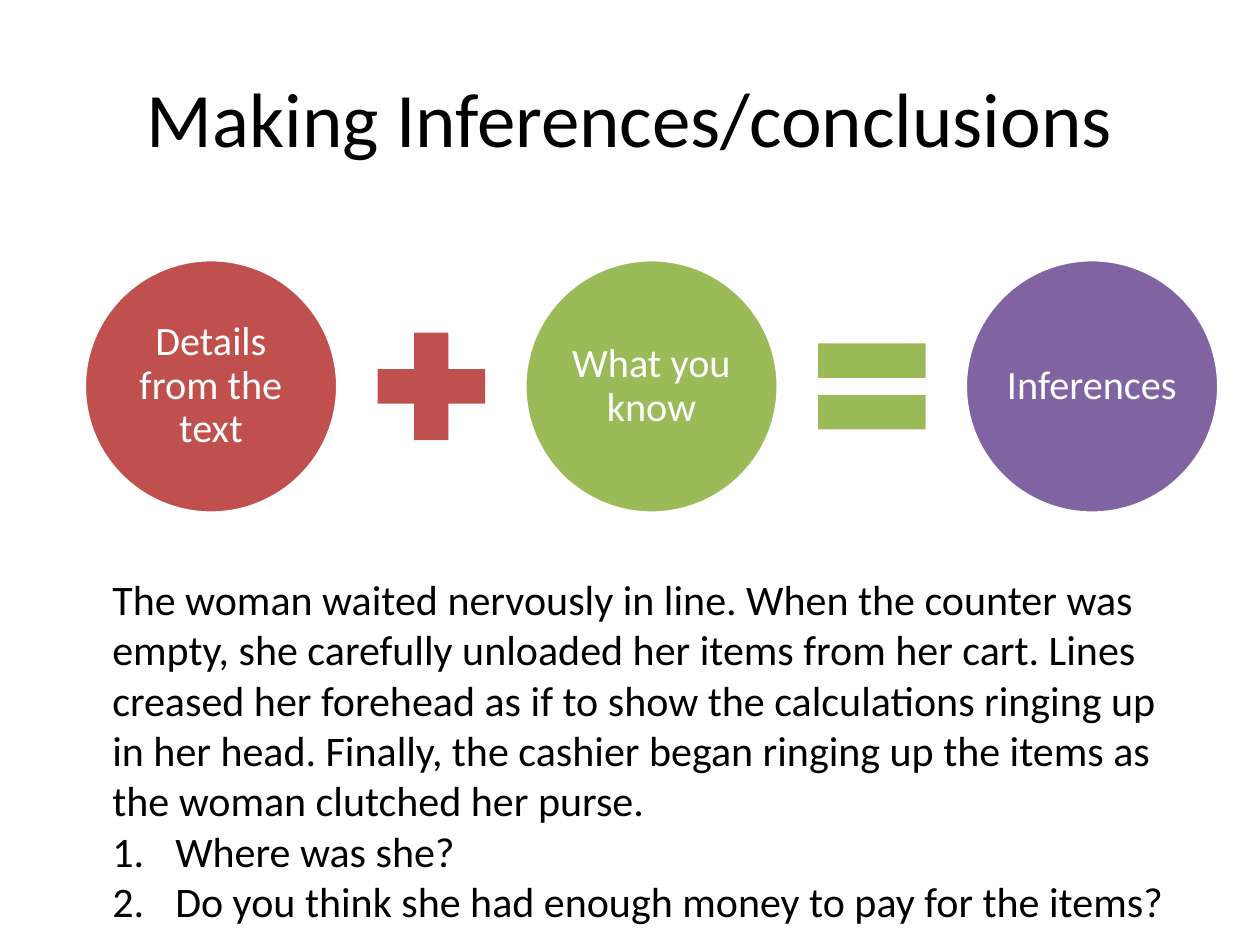
from dataclasses import dataclass

from lxml import etree
from pptx import Presentation
from pptx.dml.color import RGBColor
from pptx.enum.shapes import MSO_SHAPE
from pptx.enum.text import MSO_ANCHOR, MSO_AUTO_SIZE, PP_ALIGN
from pptx.oxml.ns import qn
from pptx.util import Cm, Pt

OVAL, PLUS, EQUAL = MSO_SHAPE.OVAL, MSO_SHAPE.MATH_PLUS, MSO_SHAPE.MATH_EQUAL
CENTER, LEFT = PP_ALIGN.CENTER, PP_ALIGN.LEFT
TOP, MIDDLE = MSO_ANCHOR.TOP, MSO_ANCHOR.MIDDLE
NO_FIT = MSO_AUTO_SIZE.NONE


@dataclass(frozen=True)
class Theme:
    font: str = "Calibri"
    text: RGBColor = RGBColor(0x00, 0x00, 0x00)
    white: RGBColor = RGBColor(0xFF, 0xFF, 0xFF)
    red: RGBColor = RGBColor(0xC0, 0x50, 0x4D)
    green: RGBColor = RGBColor(0x9B, 0xBB, 0x59)
    purple: RGBColor = RGBColor(0x80, 0x64, 0xA2)
    title_size: int = 44
    body_size: int = 24
    term_size: int = 23


THEME = Theme()

# Equation row, in centimetres
ROW_LEFT, ROW_MIDDLE = 1.7, 7.79
CIRCLE, SIGN, GAP = 5.11, 2.95, 0.41

# Each term with its colour and the sign that follows it
TERMS = [
    ("Details from the text", THEME.red, PLUS),
    ("What you know", THEME.green, EQUAL),
    ("Inferences", THEME.purple, None),
]

PASSAGE = (
    "The woman waited nervously in line. When the counter was empty, she "
    "carefully unloaded her items from her cart. Lines creased her forehead "
    "as if to show the calculations ringing up in her head. Finally, the "
    "cashier began ringing up the items as the woman clutched her purse."
)
QUESTIONS = [
    "Where was she?",
    "Do you think she had enough money to pay for the items?",
]


def add_run(p, text, size, color):
    r = p.add_run()
    r.text = text
    r.font.name = THEME.font
    r.font.size = Pt(size)
    r.font.color.rgb = color


def place(sp, left, top, width, height):
    sp.left, sp.top = Cm(left), Cm(top)
    sp.width, sp.height = Cm(width), Cm(height)


def set_title(sp, text):
    place(sp, 1.27, 0.76, 22.86, 3.18)
    tf = sp.text_frame
    tf.auto_size = NO_FIT
    tf.vertical_anchor = MIDDLE
    p = tf.paragraphs[0]
    p.alignment = CENTER
    add_run(p, text, THEME.title_size, THEME.text)


def add_figure(slide, kind, left, size, color):
    """Add a filled square-bounded shape centred on the equation row."""
    sp = slide.shapes.add_shape(
        kind, Cm(left), Cm(ROW_MIDDLE - size / 2), Cm(size), Cm(size))
    sp.shadow.inherit = False
    sp.fill.solid()
    sp.fill.fore_color.rgb = color
    sp.line.fill.background()
    return sp


def add_term(slide, left, text, color):
    sp = add_figure(slide, OVAL, left, CIRCLE, color)
    sp.line.color.rgb = THEME.white
    sp.line.width = Pt(2)
    tf = sp.text_frame
    tf.word_wrap = True
    tf.vertical_anchor = MIDDLE
    tf.margin_left = tf.margin_right = Cm(0.08)
    tf.margin_top = tf.margin_bottom = Cm(0.08)
    p = tf.paragraphs[0]
    p.alignment = CENTER
    p.line_spacing = 0.9
    add_run(p, text, THEME.term_size, THEME.white)


def add_equation(slide):
    left = ROW_LEFT
    for text, color, sign in TERMS:
        add_term(slide, left, text, color)
        left += CIRCLE + GAP
        if sign is not None:
            add_figure(slide, sign, left, SIGN, color)
            left += SIGN + GAP


def format_paragraph(p, numbered):
    p.alignment = LEFT
    p.space_before = Pt(0)
    indent = Cm(1.27) if numbered else 0
    pPr = p._p.get_or_add_pPr()
    pPr.set("marL", str(indent))
    pPr.set("indent", str(-indent))
    if numbered:
        etree.SubElement(pPr, qn("a:buFont"), typeface="+mj-lt")
        etree.SubElement(pPr, qn("a:buAutoNum"), type="arabicPeriod")
    else:
        etree.SubElement(pPr, qn("a:buNone"))


def fill_body(sp, passage, questions):
    place(sp, 2.01, 11.43, 22.25, 7.44)
    tf = sp.text_frame
    tf.word_wrap = True
    tf.auto_size = NO_FIT
    tf.vertical_anchor = TOP
    for i, text in enumerate([passage, *questions]):
        p = tf.add_paragraph() if i else tf.paragraphs[0]
        format_paragraph(p, numbered=i > 0)
        add_run(p, text, THEME.body_size, THEME.text)


def main():
    prs = Presentation()
    prs.slide_width, prs.slide_height = Cm(25.4), Cm(19.05)
    slide = prs.slides.add_slide(prs.slide_layouts[1])

    # Title
    set_title(slide.shapes.title, "Making Inferences/conclusions")
    # Details + knowledge = inferences
    add_equation(slide)
    # Reading passage and questions
    fill_body(slide.placeholders[1], PASSAGE, QUESTIONS)

    prs.save("out.pptx")


if __name__ == "__main__":
    main()
